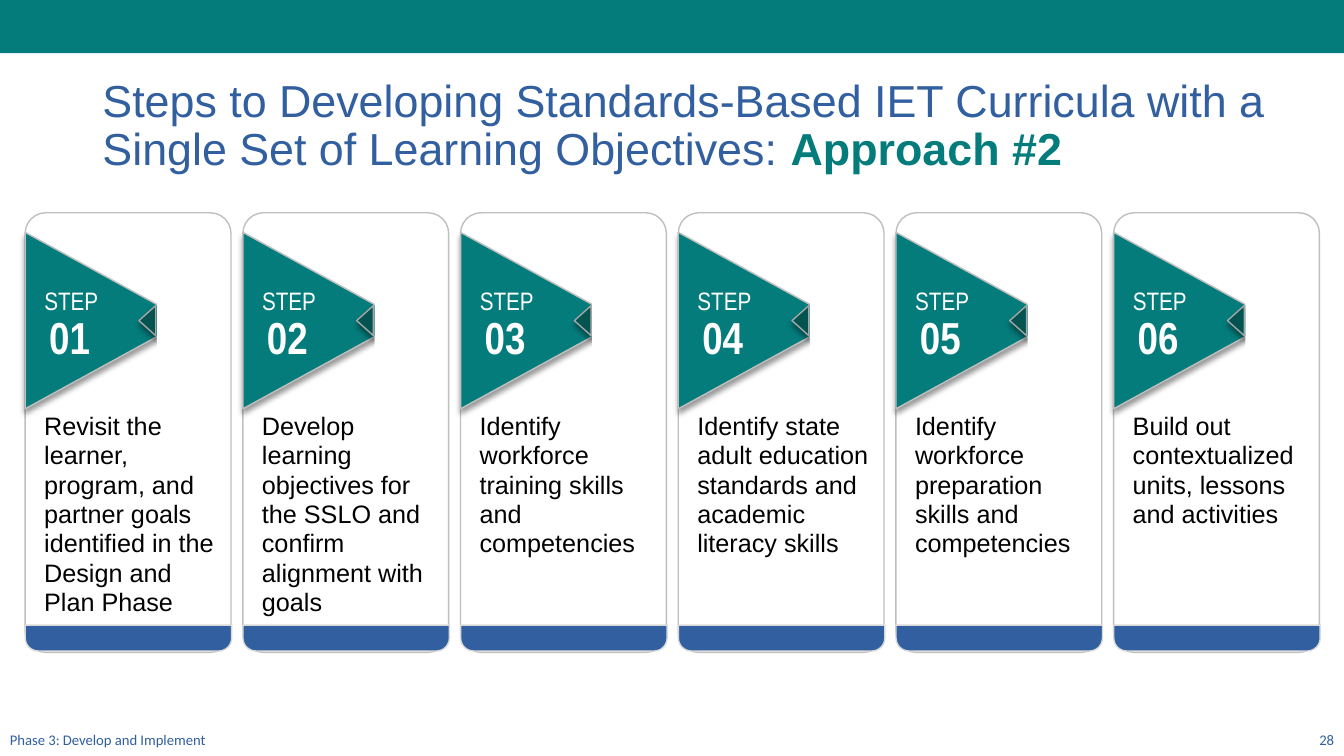
"""Build a slide of six step cards for developing IET curricula."""
from lxml import etree
from pptx import Presentation
from pptx.dml.color import RGBColor
from pptx.enum import shapes, text
from pptx.oxml import ns
from pptx.util import Pt

TEAL = RGBColor(0x04, 0x7C, 0x7C)
DARK = RGBColor(0x03, 0x53, 0x51)
BLUE = RGBColor(0x31, 0x5F, 0x9F)
WHITE = RGBColor(0xFF, 0xFF, 0xFF)
BLACK = RGBColor(0, 0, 0)
EDGE = RGBColor(0xBF, 0xBF, 0xBF)
GREY = RGBColor(0xA6, 0xA6, 0xA6)
PALE = RGBColor(0xD9, 0xD9, 0xD9)
KIND = shapes.MSO_SHAPE
ALIGN = text.PP_ALIGN
ANCHOR = text.MSO_ANCHOR


def write(home, box, words, size, color, font="Arial", bold=False,
          align=ALIGN.LEFT, anchor=ANCHOR.TOP, wrap=True, space=None):
    frame = home.add_textbox(*map(Pt, box)).text_frame
    frame.word_wrap = wrap
    frame.vertical_anchor = anchor
    para = frame.paragraphs[0]
    para.alignment = align
    para.line_spacing = space
    run = para.add_run()
    run.text = words
    run.font.name, run.font.size, run.font.bold = font, Pt(size), bold
    run.font.color.rgb = color


def draw(home, kind, box, fill, line=None, turn=0, adjust=(), shade=False):
    form = home.add_shape(kind, *map(Pt, box))
    form.rotation = turn
    for i, value in enumerate(adjust):
        form.adjustments[i] = value
    form.fill.solid()
    form.fill.fore_color.rgb = fill
    if line is None:
        form.line.fill.background()
    else:
        form.line.color.rgb = line
        form.line.width = Pt(1)
    form.shadow.inherit = False
    if shade:
        effect = form._element.spPr.find(ns.qn("a:effectLst"))
        outer = etree.SubElement(effect, ns.qn("a:outerShdw"), blurRad=str(Pt(4)),
                                 dist=str(Pt(3)), dir="5400000", rotWithShape="0")
        tint = etree.SubElement(outer, ns.qn("a:srgbClr"), val="000000")
        etree.SubElement(tint, ns.qn("a:alpha"), val="40000")


deck = Presentation()
deck.slide_width, deck.slide_height = Pt(960), Pt(540)
slide = deck.slides.add_slide(deck.slide_layouts[5])
draw(slide.shapes, KIND.RECTANGLE, (0, 0, 960, 38), TEAL)

title = slide.shapes.title
title.left, title.top, title.width, title.height = map(Pt, (66, 47.5, 854, 86.5))
frame = title.text_frame
frame.word_wrap = True
frame.auto_size = text.MSO_AUTO_SIZE.NONE
frame.vertical_anchor = ANCHOR.MIDDLE
para = frame.paragraphs[0]
para.alignment = ALIGN.LEFT
para.line_spacing = 0.9
for words, color, bold in (
    ("Steps to Developing Standards-Based IET Curricula with a "
     "Single Set of Learning Objectives: ", BLUE, False),
    ("Approach #2", TEAL, True),
):
    run = para.add_run()
    run.text = words
    run.font.name, run.font.size, run.font.bold = "Arial", Pt(32), bold
    run.font.color.rgb = color

STEPS = (
    "Revisit the learner, program, and partner goals identified in the Design and Plan Phase",
    "Develop learning objectives for the SSLO and confirm alignment with goals",
    "Identify workforce training skills and competencies",
    "Identify state adult education standards and academic literacy skills",
    "Identify workforce preparation skills and competencies",
    "Build out contextualized units, lessons and activities",
)
for i, step in enumerate(STEPS):
    x = 18 + 155.5 * i
    card = slide.shapes.add_group_shape().shapes
    draw(card, KIND.ROUNDED_RECTANGLE, (x, 152, 147, 314), WHITE, EDGE, adjust=[0.1])
    draw(card, KIND.ISOSCELES_TRIANGLE, (x - 5.5, 171.5, 126, 115), TEAL, EDGE,
         turn=90, shade=True)
    draw(card, KIND.ISOSCELES_TRIANGLE, (x + 76.5, 223, 21.5, 12), DARK, GREY,
         turn=270, shade=True)
    draw(card, KIND.RECTANGLE, (x + 94, 214, 32.5, 37), WHITE)
    write(card, (x + 6.5, 200, 53, 29), "STEP", 18, WHITE, font="Arial Narrow",
          align=ALIGN.CENTER, wrap=False)
    write(card, (x + 8, 217.5, 47.5, 46), f"{i + 1:02}", 32, WHITE, font="Arial Narrow",
          bold=True, align=ALIGN.CENTER, wrap=False)
    write(card, (x + 6.5, 290, 140, 155), step, 18, BLACK, space=Pt(21))
    draw(card, KIND.ROUND_2_SAME_RECTANGLE, (x, 446.5, 147.5, 18.5), BLUE, PALE,
         turn=180, adjust=[0.5, 0])

for box, words, align in (
    ((0, 516, 324, 22.5), "Phase 3: Develop and Implement", ALIGN.LEFT),
    ((744, 516, 216, 22.5), "28", ALIGN.RIGHT),
):
    write(slide.shapes, box, words, 10.5, BLUE, font="Calibri", align=align,
          anchor=ANCHOR.BOTTOM)

deck.save("out.pptx")
